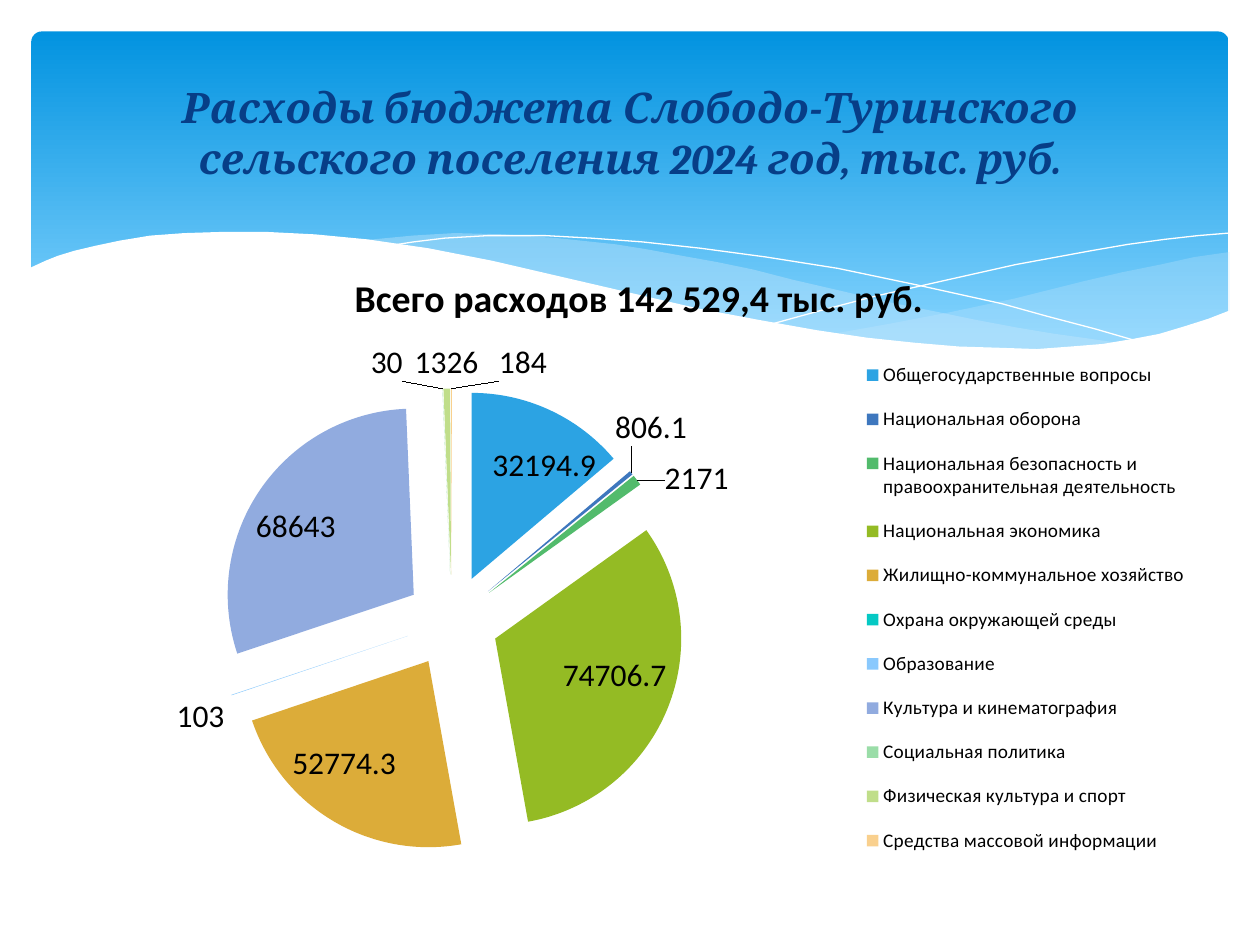
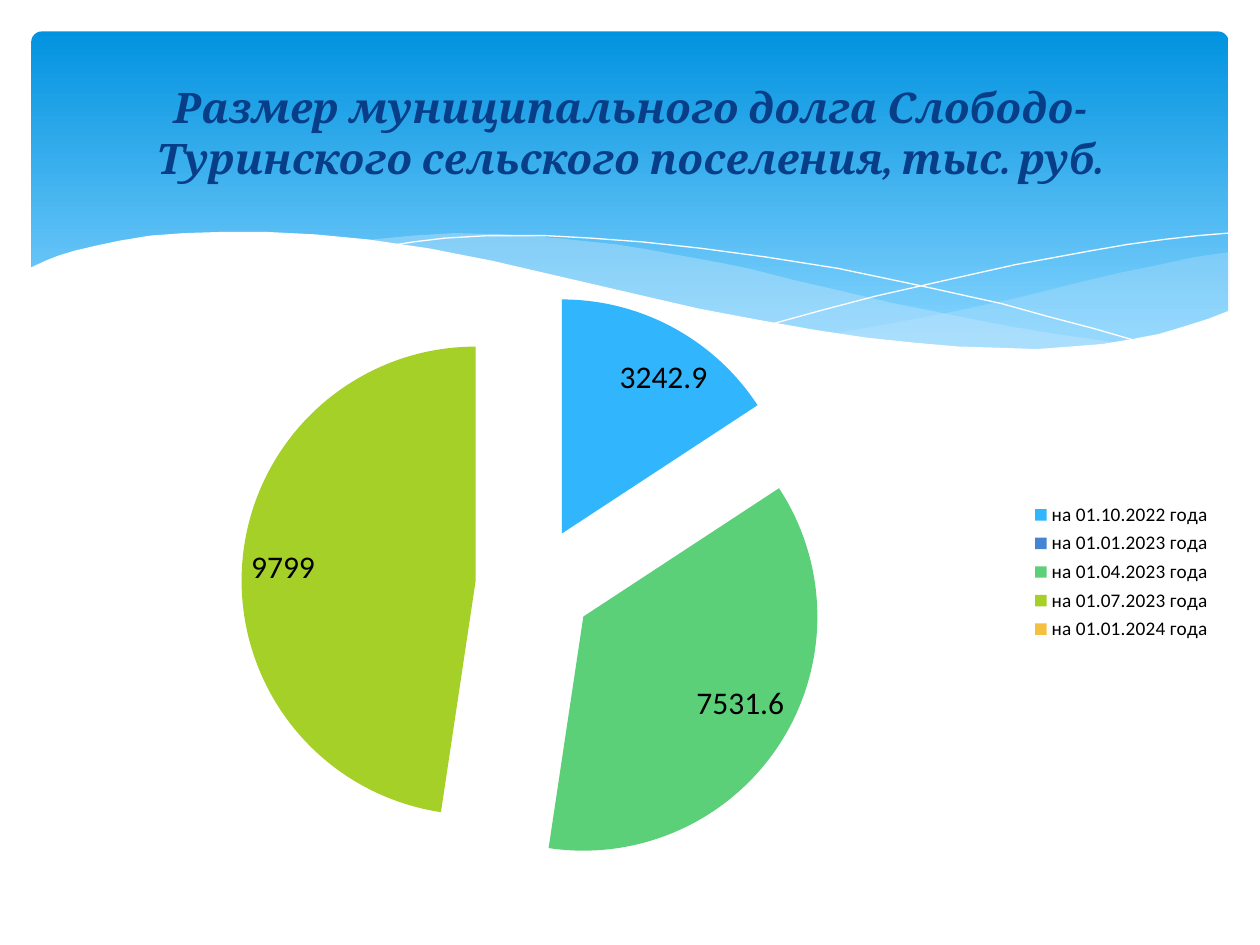
import pptx
import pptx.chart.data
import pptx.dml.color
import pptx.enum.chart
import pptx.enum.shapes
import pptx.enum.text
import pptx.oxml
import pptx.oxml.ns
import pptx.util

WHITE, BLACK, NAVY, PALE_BLUE = "FFFFFF", "000000", "073E87", "C6E7FC"
BODY_FONT, TITLE_FONT = "Calibri", "Cambria"
qn = pptx.oxml.ns.qn


def colour(value):
    return pptx.dml.color.RGBColor.from_string(value)


def write(text_frame, text, size, font, color, bold=True, italic=False):
    text_frame.text = text
    paragraph = text_frame.paragraphs[0]
    paragraph.alignment = pptx.enum.text.PP_ALIGN.CENTER
    run_font = paragraph.runs[0].font
    run_font.size, run_font.name = pptx.util.Pt(size), font
    run_font.bold, run_font.italic = bold, italic
    run_font.color.rgb = colour(color)


presentation = pptx.Presentation()
presentation.slide_width = pptx.util.Inches(10)
presentation.slide_height = pptx.util.Inches(7.5)
width, height = presentation.slide_width, presentation.slide_height
layout = presentation.slide_layouts[5]

# Waves of the header band, back to front: points in inches, fill, opacity in percent
waves = [
    ([(9.76, 2), (9.48, 2.04), (9.21, 2.1), (8.91, 2.16), (8.61, 2.23), (8.05, 2.37),
      (7.53, 2.48), (7.06, 2.57), (6.61, 2.65), (6.91, 2.69), (7.19, 2.72), (7.45, 2.75),
      (7.69, 2.77), (8.03, 2.78), (8.35, 2.77), (8.63, 2.75), (8.89, 2.72), (9.13, 2.67),
      (9.35, 2.62), (9.63, 2.52), (9.76, 2.47)], PALE_BLUE, 29),
    ([(8.93, 2.73), (8.66, 2.69), (8.37, 2.65), (8.07, 2.6), (7.75, 2.54), (7.41, 2.47),
      (7.06, 2.4), (6.68, 2.31), (6.29, 2.22), (5.98, 2.14), (5.69, 2.08), (5.41, 2.03),
      (5.14, 1.98), (4.89, 1.94), (4.42, 1.89), (3.99, 1.86), (3.61, 1.85), (3.28, 1.87),
      (2.86, 1.91), (3.23, 1.96), (3.62, 2.03), (4.04, 2.11), (4.49, 2.22), (4.91, 2.32),
      (5.3, 2.4), (5.66, 2.48), (6.01, 2.55), (6.34, 2.61), (6.65, 2.66), (6.95, 2.7),
      (7.22, 2.74), (7.48, 2.76), (7.73, 2.77), (7.96, 2.78), (8.28, 2.78), (8.57, 2.77),
      (8.76, 2.75)], PALE_BLUE, 40),
    ([(3.09, 1.95), (3.28, 1.92), (3.53, 1.89), (3.87, 1.87), (4.33, 1.87), (4.69, 1.89),
      (5.1, 1.92), (5.56, 1.97), (6.08, 2.04), (6.65, 2.13), (7.27, 2.26), (7.95, 2.41),
      (8.31, 2.51), (8.69, 2.61), (9.07, 2.72)], None, 100),
    ([(6.13, 2.57), (6.53, 2.46), (6.95, 2.35), (7.48, 2.23), (8.06, 2.1), (8.66, 1.99),
      (8.95, 1.94), (9.24, 1.9), (9.51, 1.87), (9.75, 1.85)], None, 100),
    ([(9.77, 2.46), (9.59, 2.53), (9.4, 2.59), (9.2, 2.65), (8.99, 2.69), (8.75, 2.73),
      (8.5, 2.75), (8.23, 2.77), (7.93, 2.76), (7.61, 2.75), (7.26, 2.72), (6.88, 2.68),
      (6.48, 2.62), (6.03, 2.54), (5.55, 2.45), (5.03, 2.33), (4.47, 2.2), (3.91, 2.07),
      (3.4, 1.97), (2.92, 1.9), (2.5, 1.86), (2.11, 1.84), (1.77, 1.84), (1.46, 1.85),
      (1.19, 1.87), (0.95, 1.91), (0.76, 1.95), (0.59, 1.99), (0.46, 2.03), (0.36, 2.07),
      (0.23, 2.13), (0.23, 3.29), (9.77, 3.29)], WHITE, 100),
]

# Slide contents; layout boxes are left, top, width, height as shares of the chart
pies = [
    {
        "title": "Расходы бюджета Слободо-Туринского сельского поселения 2024 год, тыс. руб.",
        "chart_title": "Всего расходов 142 529,4 тыс. руб.",
        "slices": [
            ("Общегосударственные вопросы", 32194.9, "2CA3E3"),
            ("Национальная оборона", 806.1, "3E77BE"),
            ("Национальная безопасность и правоохранительная деятельность", 2171, "52BB6C"),
            ("Национальная экономика", 74706.7, "94BB24"),
            ("Жилищно-коммунальное хозяйство", 52774.3, "DCAC39"),
            ("Охрана окружающей среды", None, "05C9C4"),
            ("Образование", 103, "8AC9FD"),
            ("Культура и кинематография", 68643, "91ABDF"),
            ("Социальная политика", 30, "9ADDA8"),
            ("Физическая культура и спорт", 1326, "C0DE8A"),
            ("Средства массовой информации", 184, "F9D08E"),
        ],
        "plot_box": (0.14, 0.22, 0.4, 0.71),
        "legend_box": (0.68, 0.15, 0.3, 0.81),
    },
    {
        "title": "Размер муниципального долга Слободо-Туринского сельского поселения, тыс. руб.",
        "chart_title": None,
        "slices": [
            ("на 01.10.2022 года", 3242.9, "31B6FD"),
            ("на 01.01.2023 года", 0, "4584D3"),
            ("на 01.04.2023 года", 7531.6, "5BD078"),
            ("на 01.07.2023 года", 9799, "A5D028"),
            ("на 01.01.2024 года", 0, "F5C040"),
        ],
        "plot_box": (0.16, 0.07, 0.5, 0.9),
        "legend_box": None,
    },
]
slides = [presentation.slides.add_slide(layout) for pie in pies]

# Shared header band: drawn once, then handed over to the layout
shapes = slides[0].shapes
band = shapes.add_shape(pptx.enum.shapes.MSO_SHAPE.ROUNDED_RECTANGLE,
                        int(width * 0.025), int(height / 30),
                        int(width * 0.95), int(height * 0.36))
band.adjustments[0] = 0.03
band.fill.gradient()
band.fill.gradient_angle = 270
for stop, (position, value) in zip(band.fill.gradient_stops, [(0, "0293E0"), (0.9, "83D3FE")]):
    stop.position, stop.color.rgb = position, colour(value)
band.line.fill.background()
header = [band]

for points, fill, opacity in waves:
    (start, *rest) = [(pptx.util.Inches(x), pptx.util.Inches(y)) for x, y in points]
    builder = shapes.build_freeform(*start)
    builder.add_line_segments(rest, close=fill is not None)
    wave = builder.convert_to_shape()
    if fill:
        wave.fill.solid()
        wave.fill.fore_color.rgb = colour(fill)
        wave.line.fill.background()
        fill_color = wave.element.find(".//" + qn("a:srgbClr"))
        alpha = fill_color.makeelement(qn("a:alpha"))
        alpha.set("val", str(opacity * 1000))
        fill_color.append(alpha)
    else:
        wave.fill.background()
        wave.line.color.rgb = colour(WHITE)
        wave.line.width = 0
    header.append(wave)

for shape in header:
    shape.shadow.inherit = False
    layout.shapes.element.append(shape.element)

for slide, pie in zip(slides, pies):
    # Slide title
    title = slide.shapes.title
    title.left, title.top = int(width * 0.05), int(height * 0.05)
    title.width, title.height = int(width * 0.9), int(height * 0.18)
    title.text_frame.vertical_anchor = pptx.enum.text.MSO_ANCHOR.MIDDLE
    write(title.text_frame, pie["title"], 24, TITLE_FONT, NAVY, italic=True)

    # Pie chart
    names, values, fills = zip(*pie["slices"])
    chart_data = pptx.chart.data.CategoryChartData()
    chart_data.categories = names
    chart_data.add_series("Series 1", values)
    chart = slide.shapes.add_chart(pptx.enum.chart.XL_CHART_TYPE.PIE,
                                   pptx.util.Inches(0.43), pptx.util.Inches(1.94),
                                   pptx.util.Inches(9.29), pptx.util.Inches(5.2),
                                   chart_data).chart
    chart.font.size, chart.font.name = pptx.util.Pt(18), BODY_FONT
    chart.font.color.rgb = colour(BLACK)
    chart.has_title = pie["chart_title"] is not None
    if chart.has_title:
        write(chart.chart_title.text_frame, pie["chart_title"], 21.6, BODY_FONT, BLACK)

    # Exploded slices
    series = chart.plots[0].series[0]
    category = chart.element.find(".//" + qn("c:cat"))
    explosion = category.makeelement(qn("c:explosion"))
    explosion.set("val", "25")
    category.addprevious(explosion)
    for index, value in enumerate(fills):
        slice_fill = series.points[index].format.fill
        slice_fill.solid()
        slice_fill.fore_color.rgb = colour(value)

    # Value labels, none on empty slices
    labels = series.data_labels
    labels.show_value = True
    labels.position = pptx.enum.chart.XL_LABEL_POSITION.BEST_FIT
    label_list = chart.element.find(f".//{qn('c:ser')}/{qn('c:dLbls')}")
    empty = [index for index, value in enumerate(values) if not value]
    for index in reversed(empty):
        label_list.insert(0, pptx.oxml.parse_xml(
            f'<c:dLbl {pptx.oxml.ns.nsdecls("c")}><c:idx val="{index}"/>'
            '<c:delete val="1"/></c:dLbl>'))

    # Legend
    chart.has_legend = True
    chart.legend.position = pptx.enum.chart.XL_LEGEND_POSITION.RIGHT
    chart.legend.include_in_layout = False
    chart.legend.font.size, chart.legend.font.name = pptx.util.Pt(11), BODY_FONT
    chart.legend.font.color.rgb = colour(BLACK)

    # Fixed places of the plot and the legend
    for tag, place, target, box in [("c:plotArea", 0, '<c:layoutTarget val="inner"/>', pie["plot_box"]),
                                    ("c:legend", 1, "", pie["legend_box"])]:
        if box is None:
            continue
        parent = chart.element.find(".//" + qn(tag))
        for old_layout in parent.findall(qn("c:layout")):
            parent.remove(old_layout)
        lengths = "".join(f'<c:{key} val="{share}"/>' for key, share in zip("xywh", box))
        parent.insert(place, pptx.oxml.parse_xml(
            f'<c:layout {pptx.oxml.ns.nsdecls("c")}><c:manualLayout>{target}'
            f'<c:xMode val="edge"/><c:yMode val="edge"/>{lengths}'
            '</c:manualLayout></c:layout>'))

presentation.save("out.pptx")
